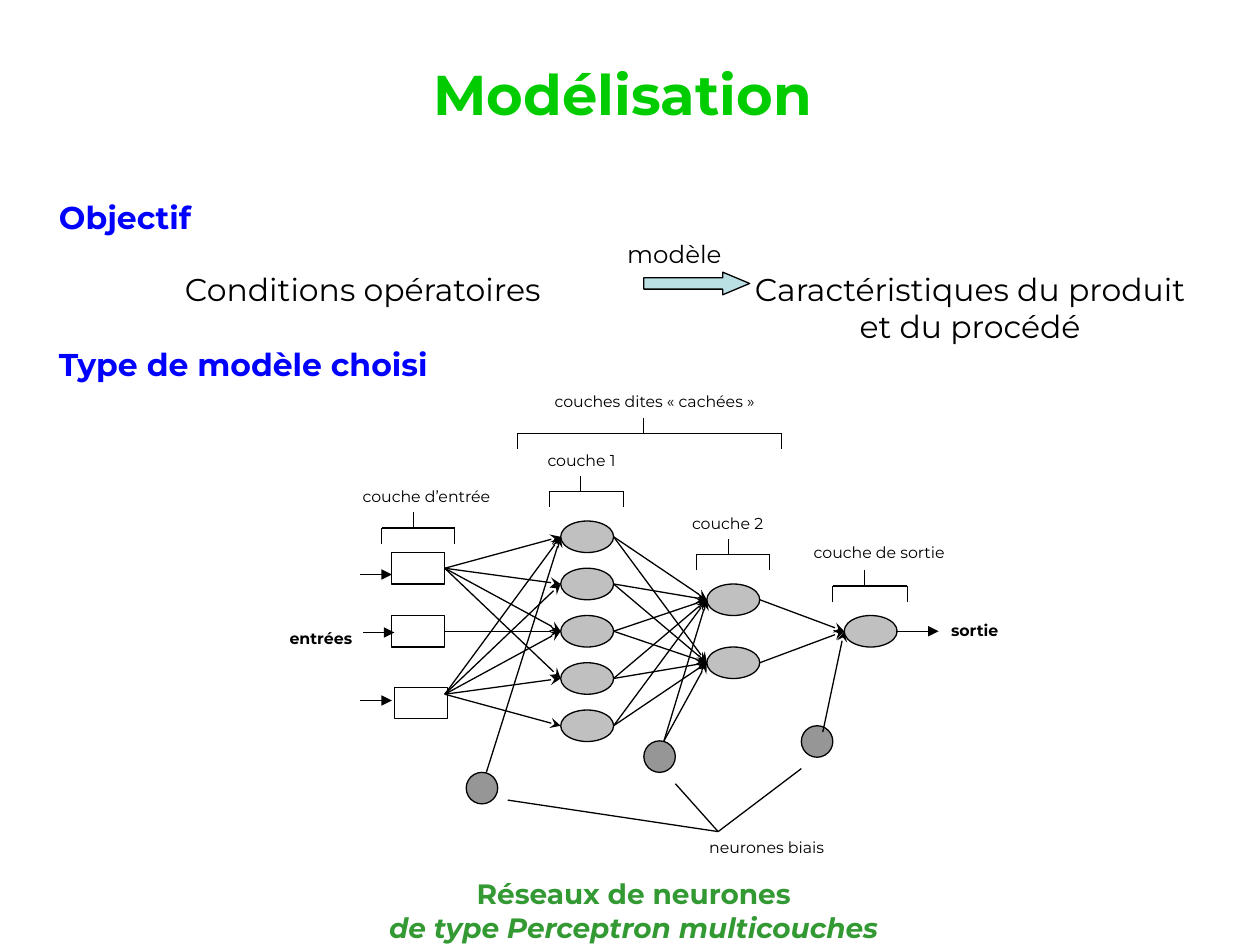
from pptx import Presentation
from pptx.dml.color import RGBColor
from pptx.enum.shapes import MSO_CONNECTOR, MSO_SHAPE
from pptx.enum.text import PP_ALIGN
from pptx.oxml.ns import qn
from pptx.util import Inches, Pt
from lxml import etree

LEFT, CENTER = PP_ALIGN.LEFT, PP_ALIGN.CENTER
OVAL, RECT, ARROW = MSO_SHAPE.OVAL, MSO_SHAPE.RECTANGLE, MSO_SHAPE.RIGHT_ARROW
STRAIGHT = MSO_CONNECTOR.STRAIGHT
FONT = "Montserrat"
BLACK, WHITE, BLUE = "000000", "FFFFFF", "0000FF"
NEURON_GREY, BIAS_GREY = "C0C0C0", "969696"
NODE_W, NODE_H, BIAS_SIZE = 0.42, 0.25, 0.25


def color(value):
    return RGBColor.from_string(value)


def add_text(page, box, lines, size, ink=BLACK, bold=False, align=LEFT):
    """Each line is a (text, italic) pair or a plain string."""
    frame = page.shapes.add_textbox(*map(Inches, box)).text_frame
    frame.word_wrap = True
    for index, line in enumerate(lines):
        text, italic = (line, False) if isinstance(line, str) else line
        para = frame.paragraphs[0] if index == 0 else frame.add_paragraph()
        para.alignment = align
        span = para.add_run()
        span.text = text
        font = span.font
        font.name, font.size, font.bold, font.italic = FONT, Pt(size), bold, italic
        font.color.rgb = color(ink)


def add_shape(page, kind, box, fill):
    shape = page.shapes.add_shape(kind, *map(Inches, box))
    shape.shadow.inherit = False
    shape.fill.solid()
    shape.fill.fore_color.rgb = color(fill)
    shape.line.color.rgb = color(BLACK)
    shape.line.width = Pt(0.75)
    return shape


def add_line(page, start, end, head=None):
    line = page.shapes.add_connector(STRAIGHT, *map(Inches, (*start, *end)))
    line.line.color.rgb = color(BLACK)
    line.line.width = Pt(0.75)
    if head:
        etree.SubElement(line.line._get_or_add_ln(), qn("a:tailEnd"), type=head)
    etree.SubElement(line._element.spPr, qn("a:effectLst"))


def add_bracket(page, left, top, width, stem):
    """Horizontal bracket open at the bottom, with a stem on top."""
    right, tick = left + width, 0.125
    add_line(page, (left, top), (right, top))
    for x in (left, right):
        add_line(page, (x, top), (x, top + tick))
    add_line(page, (stem, top), (stem, top - tick))


def add_objective(page, left, top):
    add_text(page, (left, top, 4, 0.4), ["Objectif"], 18, BLUE, True)
    add_text(page, (left + 4.51, top + 0.33, 1.2, 0.34), ["modèle"], 14)
    add_text(page, (left + 1, top + 0.57, 3.4, 0.4), ["Conditions opératoires"], 18)
    add_text(page, (left + 5.33, top + 0.57, 4, 0.71),
             ["Caractéristiques du produit", "et du procédé"], 18, align=CENTER)
    add_text(page, (left, top + 1.17, 4, 0.4), ["Type de modèle choisi"], 18, BLUE, True)
    arrow = add_shape(page, ARROW, (left + 4.74, top + 0.64, 0.84, 0.18), "BBE0E3")
    arrow.adjustments[0], arrow.adjustments[1] = 0.5, 1.19


def add_network(page, left, top):
    """Multilayer perceptron, placed from its upper left corner."""
    def at(x, y):
        return left + x, top + y

    def node(kind, x, middle, fill):
        add_shape(page, kind, (*at(x, middle - NODE_H / 2), NODE_W, NODE_H), fill)

    # Layers: horizontal position and vertical centres
    inputs = [(0.92, 1.45), (0.92, 1.95), (0.94, 2.52)]
    first = [(2.26, 1.2 + 0.375 * row) for row in range(5)]
    second = [(3.42, 1.7), (3.42, 2.2)]
    output = (4.51, 1.95)
    for place in inputs:
        node(RECT, *place, WHITE)
    for place in first + second + [output]:
        node(OVAL, *place, NEURON_GREY)

    # Links between layers
    sources = [(1.34, 1.45), (1.34, 1.95), (1.34, 2.45)]
    targets = [first[:4], first[2:3], first]
    links = [(source, end) for source, ends in zip(sources, targets) for end in ends]
    links += [((x + NODE_W, y), end) for x, y in first for end in second]
    links += [((x + NODE_W, y), output) for x, y in second]

    # Bias neurons, their links and the lines to their label
    for x, y in ((1.51, 3.07), (2.92, 2.82), (4.17, 2.7)):
        add_shape(page, OVAL, (*at(x, y), BIAS_SIZE, BIAS_SIZE), BIAS_GREY)
    links += [((1.67, 3.07), first[0]), ((3.08, 2.82), second[0]),
              ((3.08, 2.82), second[1]), ((4.34, 2.75), output)]
    for start, end in links:
        add_line(page, at(*start), at(*end), "stealth")
    for start in ((1.84, 3.29), (3.17, 3.16), (4.17, 3.04)):
        add_line(page, at(*start), at(3.51, 3.54))

    # Arrows into and out of the network
    for x, y, length in ((0.67, 1.5, 0.25), (0.69, 1.96, 0.25),
                         (0.67, 2.5, 0.25), (4.92, 1.95, 0.34)):
        add_line(page, at(x, y), at(x + length, y), "triangle")

    # Brackets over the layers: left, top, width, stem
    for x, y, width, stem in ((0.84, 1.13, 0.58, 1.09), (2.17, 0.84, 0.59, 2.42),
                              (3.34, 1.34, 0.58, 3.59), (4.42, 1.59, 0.59, 4.67),
                              (1.92, 0.38, 2.09, 2.92)):
        add_bracket(page, *at(x, y), width, stem + left)

    # Labels
    for text, x, y, width, bold, align in (
            ("couches dites «\u00a0cachées\u00a0»", 1.92, 0, 2.17, False, CENTER),
            ("couche 1", 1.76, 0.47, 1.33, False, CENTER),
            ("couche d’entrée", 0.59, 0.75, 1.33, False, LEFT),
            ("couche 2", 2.92, 0.97, 1.33, False, CENTER),
            ("couche de sortie", 4.17, 1.2, 1.33, False, LEFT),
            ("neurones biais", 3.34, 3.54, 1.17, False, LEFT),
            ("entrées", 0.01, 1.88, 1.33, True, LEFT),
            ("sortie", 5.26, 1.82, 1, True, LEFT)):
        add_text(page, (*at(x, y), width, 0.25), [text], 9, bold=bold, align=align)


def main():
    deck = Presentation()
    deck.slide_width, deck.slide_height = Inches(10), Inches(7.5)
    page = deck.slides.add_slide(deck.slide_layouts[6])
    add_text(page, (3.34, 0.42, 3.49, 0.64), ["Modélisation"], 32, "00CC00", True)
    add_objective(page, 0.37, 1.52)
    add_network(page, 2.19, 3.06)
    add_text(page, (2.16, 6.91, 5.74, 0.64),
             ["Réseaux de neurones", ("de type Perceptron multicouches", True)],
             16, "339933", True, CENTER)
    deck.save("out.pptx")


if __name__ == "__main__":
    main()
